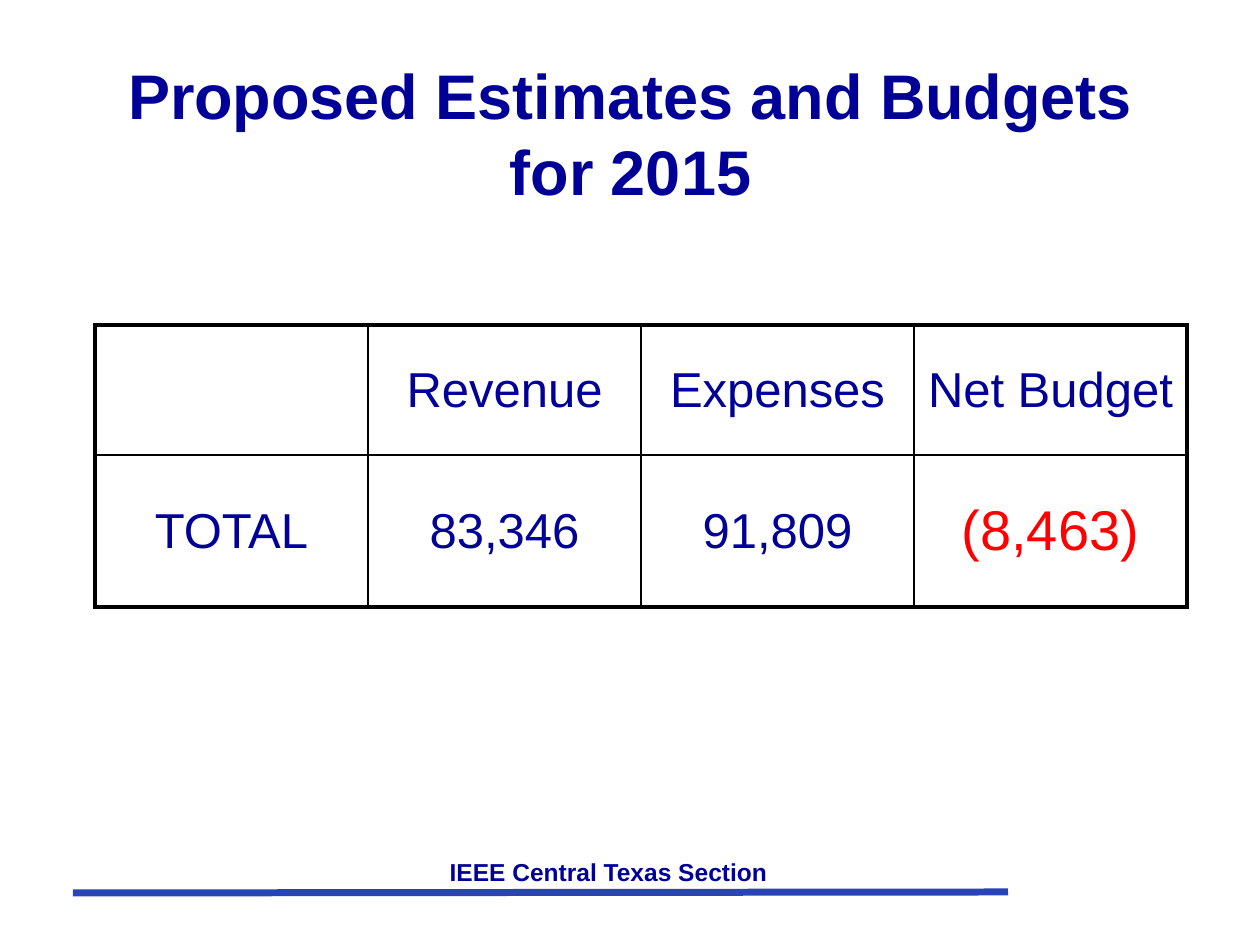
from lxml.etree import SubElement as Sub
from pptx import Presentation
from pptx.dml.color import RGBColor as Rgb
from pptx.enum.shapes import MSO_CONNECTOR as Conn
from pptx.enum.text import MSO_ANCHOR as Anchor, PP_ALIGN as Align
from pptx.oxml.ns import qn
from pptx.util import Pt

SCALE = 914400 / 126
COLORS = {"navy": "000099", "red": "FF0000", "rule": "2944B7", "edge": "000000"}
ROWS = [["", "Revenue", "Expenses", "Net Budget"],
        ["TOTAL", "83,346", "91,809", "(8,463)"]]
HEIGHTS = [130, 152]


def px(*nums):
    return [round(num * SCALE) for num in nums]


def style(frame, text, size, color="navy", bold=False):
    para = frame.paragraphs[0]
    para.text = text
    para.alignment = Align.CENTER
    for run in para.runs:
        font = run.font
        font.name, font.size, font.bold = "Arial", Pt(size), bold
        font.color.rgb = Rgb.from_string(COLORS[color])


def add_text(slide, box, text, size):
    frame = slide.shapes.add_textbox(*px(*box)).text_frame
    frame.word_wrap = True
    frame.vertical_anchor = Anchor.MIDDLE
    style(frame, text, size, bold=True)


def add_edge(cell, side, width):
    line = Sub(cell._tc.get_or_add_tcPr(), qn("a:ln" + side), w=str(Pt(width)))
    fill = Sub(line, qn("a:solidFill"))
    Sub(fill, qn("a:srgbClr"), val=COLORS["edge"])


def add_budget(slide, box):
    count, wide = len(ROWS), len(ROWS[0])
    table = slide.shapes.add_table(count, wide, *px(*box)).table
    table.first_row = table.horz_banding = False
    for col in table.columns:
        col.width = px(box[2] / wide)[0]
    for y, (texts, height) in enumerate(zip(ROWS, HEIGHTS)):
        table.rows[y].height = px(height)[0]
        for x, text in enumerate(texts):
            cell = table.cell(y, x)
            outer = {"L": x == 0, "R": x == wide - 1,
                     "T": y == 0, "B": y == count - 1}
            for side, thick in outer.items():
                add_edge(cell, side, 2.25 if thick else 1)
            cell.fill.background()
            cell.vertical_anchor = Anchor.MIDDLE
            loss = text.startswith("(")
            style(cell.text_frame, text, 32 if loss else 28,
                  "red" if loss else "navy")


def add_footer(slide, box):
    left, top, width, height = box
    ends = px(left, top + height, left + width, top + height - 1)
    rule = slide.shapes.add_connector(Conn.STRAIGHT, *ends)
    rule.line.color.rgb = Rgb.from_string(COLORS["rule"])
    rule.line.width = Pt(4)
    Sub(rule._element.spPr, qn("a:effectLst"))
    add_text(slide, (left + 147, top, 777, 42), "IEEE Central Texas Section", 14)


def main():
    deck = Presentation()
    deck.slide_width, deck.slide_height = px(1260, 945)
    slide = deck.slides.add_slide(deck.slide_layouts[6])
    add_footer(slide, (73, 851, 935, 42))
    add_text(slide, (95, 53, 1071, 158), "Proposed Estimates and Budgets\nfor 2015", 36)
    add_budget(slide, (95, 325, 1092, sum(HEIGHTS)))
    deck.save("out.pptx")


if __name__ == "__main__":
    main()
